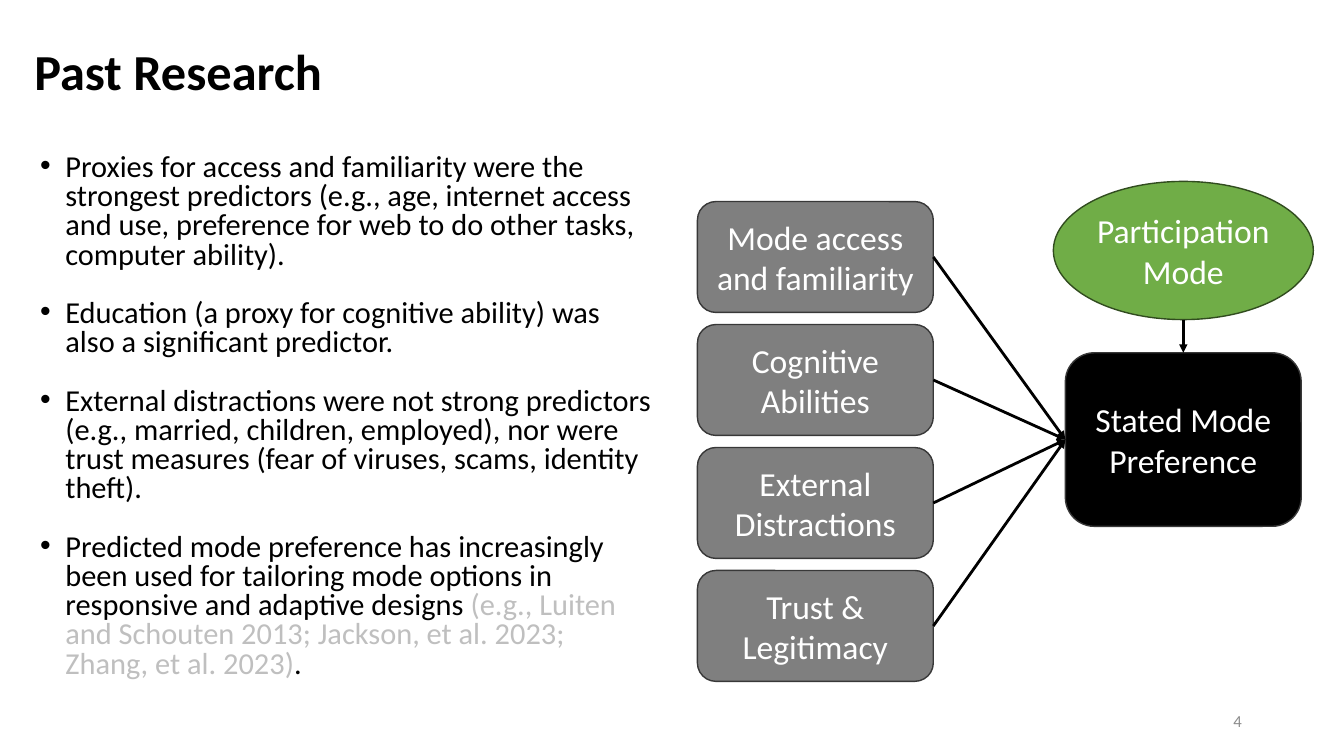
from dataclasses import dataclass

from lxml import etree
from pptx import Presentation
from pptx.dml.color import RGBColor
from pptx.enum.shapes import MSO_CONNECTOR, MSO_SHAPE
from pptx.enum.text import MSO_ANCHOR, MSO_AUTO_SIZE, PP_ALIGN
from pptx.oxml.ns import qn
from pptx.util import Pt

STRAIGHT = MSO_CONNECTOR.STRAIGHT
ROUNDED, ELLIPSE = MSO_SHAPE.ROUNDED_RECTANGLE, MSO_SHAPE.OVAL
TOP, MIDDLE = MSO_ANCHOR.TOP, MSO_ANCHOR.MIDDLE
LEFT, CENTER, RIGHT = PP_ALIGN.LEFT, PP_ALIGN.CENTER, PP_ALIGN.RIGHT
NO_FIT = MSO_AUTO_SIZE.NONE
TITLE_ONLY = 5
TOP_SITE, LEFT_SITE, BOTTOM_SITE, RIGHT_SITE = range(4)
ELLIPSE_BOTTOM_SITE = 4


@dataclass(frozen=True)
class Theme:
    """Colours, font and type sizes of the slide."""
    font: str = "Calibri"
    black: str = "000000"
    white: str = "FFFFFF"
    citation: str = "BFBFBF"
    number: str = "8C8C8C"
    factor: str = "7F7F7F"
    box_line: str = "383838"
    mode: str = "70AD47"
    mode_line: str = "314C1F"
    title_size: float = 36
    body_size: float = 21.7
    diagram_size: float = 24
    number_size: float = 12


THEME = Theme()

FINDINGS = [
    [("Proxies for access and familiarity were the strongest predictors (e.g., age, "
      "internet access and use, preference for web to do other tasks, computer ability).",
      THEME.black)],
    [("Education (a proxy for cognitive ability) was also a significant predictor.",
      THEME.black)],
    [("External distractions were not strong predictors (e.g., married, children, "
      "employed), nor were trust measures (fear of viruses, scams, identity theft).",
      THEME.black)],
    [("Predicted mode preference has increasingly been used for tailoring mode options "
      "in responsive and adaptive designs ", THEME.black),
     ("(e.g., Luiten and Schouten 2013; Jackson, et al. 2023; Zhang, et al. 2023)",
      THEME.citation),
     (".", THEME.black)],
]
FACTORS = ["Mode access and familiarity", "Cognitive Abilities",
           "External Distractions", "Trust & Legitimacy"]


def place(box, left, top, width, height):
    """Set the position and size of a box in points."""
    box.left, box.top, box.width, box.height = map(Pt, (left, top, width, height))


def write(box, paragraphs, *, size, bold=False, align=LEFT, anchor=MIDDLE,
          line_spacing=1.0, space_after=0, bullet=False, side_inset=7.2):
    """Fill a box with paragraphs, each a list of (text, colour) spans."""
    frame = box.text_frame
    frame.word_wrap = True
    frame.auto_size = NO_FIT
    frame.vertical_anchor = anchor
    frame.margin_left = frame.margin_right = Pt(side_inset)
    for index, spans in enumerate(paragraphs):
        para = frame.add_paragraph() if index else frame.paragraphs[0]
        para.alignment = align
        para.line_spacing = line_spacing
        para.space_after = Pt(space_after)
        if bullet:
            add_bullet(para)
        for text, colour in spans:
            span = para.add_run()
            span.text = text
            span.font.name = THEME.font
            span.font.size = Pt(size)
            span.font.bold = bold
            span.font.color.rgb = RGBColor.from_string(colour)


def add_bullet(para):
    """Give a paragraph a hanging round bullet."""
    properties = para._p.get_or_add_pPr()
    properties.set("marL", str(Pt(18)))
    properties.set("indent", str(Pt(-18)))
    etree.SubElement(properties, qn("a:buFont")).set("typeface", "Arial")
    etree.SubElement(properties, qn("a:buChar")).set("char", "•")


def add_text(page, bounds, paragraphs, **text_format):
    """Add a text box at the given bounds."""
    box = page.shapes.add_textbox(*map(Pt, bounds))
    write(box, paragraphs, **text_format)


def add_node(page, kind, bounds, text, fill, line, side_inset=7.2):
    """Add a filled diagram shape with a centred label."""
    node = page.shapes.add_shape(kind, *map(Pt, bounds))
    node.shadow.inherit = False
    node.fill.solid()
    node.fill.fore_color.rgb = RGBColor.from_string(fill)
    node.line.color.rgb = RGBColor.from_string(line)
    node.line.width = Pt(1)
    write(node, [[(text, THEME.white)]], size=THEME.diagram_size, align=CENTER,
          side_inset=side_inset)
    return node


def add_arrow(page, source, source_site, target, target_site):
    """Join two nodes with a straight arrow and return it."""
    arrow = page.shapes.add_connector(STRAIGHT, 0, 0, 0, 0)
    arrow.begin_connect(source, source_site)
    arrow.end_connect(target, target_site)
    arrow.line.color.rgb = RGBColor.from_string(THEME.black)
    arrow.line.width = Pt(2)
    etree.SubElement(arrow.line._get_or_add_ln(), qn("a:tailEnd")).set("type", "triangle")
    etree.SubElement(arrow._element.spPr, qn("a:effectLst"))
    return arrow


def add_diagram(page):
    """Draw the factors and the participation mode leading to the preference."""
    preference = add_node(page, ROUNDED, (761, 252, 168.5, 124), "Stated Mode Preference",
                          THEME.black, THEME.box_line)
    for index, factor in enumerate(FACTORS):
        bounds = (498.2, 144 + index * 87.84, 168.5, 79.2)
        node = add_node(page, ROUNDED, bounds, factor, THEME.factor, THEME.box_line)
        add_arrow(page, node, RIGHT_SITE, preference, LEFT_SITE)
    mode = add_node(page, ELLIPSE, (752.4, 129.6, 185.7, 98.7), "Participation Mode",
                    THEME.mode, THEME.mode_line, side_inset=0)
    arrow = add_arrow(page, mode, BOTTOM_SITE, preference, TOP_SITE)
    arrow._element.nvCxnSpPr.cNvCxnSpPr.stCxn.set("idx", str(ELLIPSE_BOTTOM_SITE))


def main():
    """Build the slide and save the deck."""
    deck = Presentation()
    deck.slide_width, deck.slide_height = Pt(960), Pt(540)
    page = deck.slides.add_slide(deck.slide_layouts[TITLE_ONLY])
    title = page.shapes.title
    place(title, 17.3, 0.7, 828, 104.4)
    write(title, [[("Past Research", THEME.black)]], size=THEME.title_size, bold=True,
          line_spacing=0.9)
    add_text(page, (21.6, 106.6, 452.2, 414), FINDINGS, size=THEME.body_size, anchor=TOP,
             line_spacing=0.8, space_after=21, bullet=True)
    add_diagram(page)
    add_text(page, (678.2, 500.4, 216, 28.8), [[("4", THEME.number)]],
             size=THEME.number_size, align=RIGHT)
    deck.save("out.pptx")


if __name__ == "__main__":
    main()
